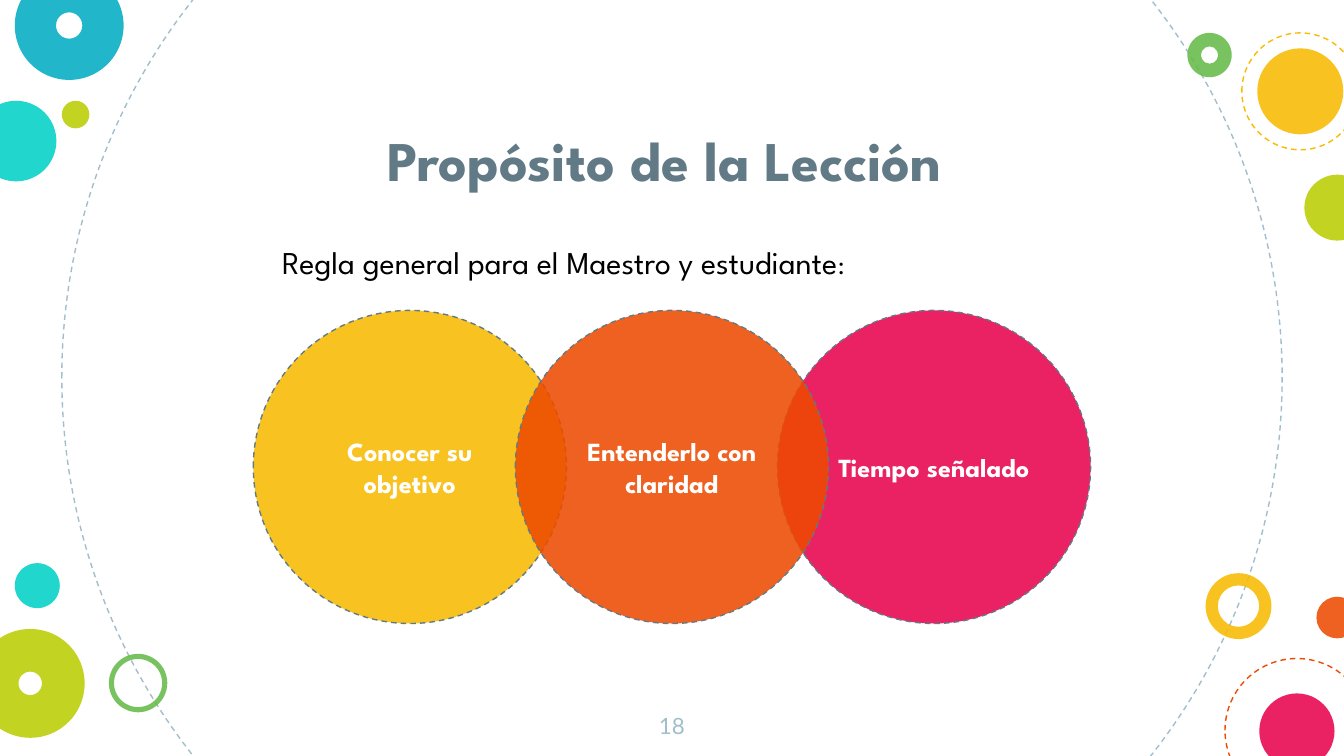
from pptx import Presentation
from pptx.dml.color import RGBColor
from pptx.enum.dml import MSO_LINE
from pptx.enum.shapes import MSO_SHAPE
from pptx.enum.text import MSO_ANCHOR, PP_ALIGN
from pptx.oxml.ns import qn
from pptx.util import Pt
from lxml.etree import SubElement

PX = 4572  # 200 px to the inch
WIDE, HIGH = 2000, 1125

WHITE = RGBColor(0xFF, 0xFF, 0xFF)
BLACK = RGBColor(0x00, 0x00, 0x00)
SLATE = RGBColor(0x61, 0x7A, 0x86)
MIST = RGBColor(0xA1, 0xBE, 0xCC)
AQUA = RGBColor(0x00, 0xD1, 0xC6)
TEAL = RGBColor(0x00, 0xAC, 0xC3)
LIME = RGBColor(0xBB, 0xCD, 0x00)
GREEN = RGBColor(0x65, 0xBB, 0x48)
GOLD = RGBColor(0xF8, 0xBB, 0x00)
ORANGE = RGBColor(0xED, 0x4A, 0x00)
PINK = RGBColor(0xE8, 0x00, 0x4C)

HEAD, BODY = "League Spartan", "Lato"

# Decoration: left, top, size, fill, dashed line, donut ring width
DECOR = [
    (92, -346, 1816, None, MIST, None),
    (-36, 150, 120, AQUA, None, None),
    (1794, 853, 98, GOLD, None, 0.186),
    (22, -43, 162, TEAL, None, 0.379),
    (92, 150, 41, LIME, None, None),
    (1823, 980, 214, None, ORANGE, None),
    (162, 973, 87, GREEN, None, 0.088),
    (1959, 888, 62, ORANGE, None, None),
    (-36, 936, 162, LIME, None, 0.392),
    (1874, 1032, 112, PINK, None, None),
    (1767, 49, 66, GREEN, None, 0.306),
    (1871, 72, 128, GOLD, None, None),
    (1941, 260, 98, LIME, None, None),
    (1848, 49, 174, None, GOLD, None),
    (22, 838, 67, AQUA, None, None),
]

# Main circles from back to front: column, text, fill
STEPS = [
    (0, "Conocer su objetivo", GOLD),
    (2, "Tiempo señalado ", PINK),
    (1, "Entenderlo con claridad", ORANGE),
]
LEFT, TOP, SIZE = 377, 462, 466
STEP = (WIDE - 2 * LEFT - SIZE) / 2

# Text boxes: place, anchor, alignment, runs of (text, size, font, colour, bold)
TEXTS = [
    ((423, 167, 1154, 140), MSO_ANCHOR.BOTTOM, PP_ALIGN.CENTER,
     [("Propósito de la Lección ", 30, HEAD, SLATE, True)]),
    ((949, 1040, 102, 86), MSO_ANCHOR.TOP, PP_ALIGN.CENTER,
     [("18", 12, BODY, MIST, False)]),
    ((400, 341, 1124, 98), MSO_ANCHOR.TOP, PP_ALIGN.LEFT,
     [("Regla general para el Maestro y estudiante", 17, HEAD, BLACK, False),
      (":", 14, HEAD, BLACK, False)]),
]


def emu(*sizes):
    return [round(size * PX) for size in sizes]


def add_disc(left, top, size, fill, line, ring=None):
    kind = MSO_SHAPE.OVAL if ring is None else MSO_SHAPE.DONUT
    disc = slide.shapes.add_shape(kind, *emu(left, top, size, size))
    disc.shadow.inherit = False
    if ring is not None:
        disc.adjustments[0] = ring
    if fill is None:
        disc.fill.background()
    else:
        disc.fill.solid()
        disc.fill.fore_color.rgb = fill
        color = disc.element.spPr.find(qn("a:solidFill"))[0]
        SubElement(color, qn("a:alpha")).set("val", "87000")
    if line is None:
        disc.line.fill.background()
    else:
        disc.line.color.rgb = line
        disc.line.width = Pt(0.75)
        disc.line.dash_style = MSO_LINE.DASH
    return disc


def write(shape, anchor, align, runs):
    frame = shape.text_frame
    frame.word_wrap = True
    frame.vertical_anchor = anchor
    frame.margin_left = frame.margin_right = 20 * PX
    frame.margin_top = frame.margin_bottom = 20 * PX
    para = frame.paragraphs[0]
    para.alignment = align
    for text, size, face, color, bold in runs:
        run = para.add_run()
        run.text = text
        run.font.size = Pt(size)
        run.font.name = face
        run.font.color.rgb = color
        run.font.bold = bold


deck = Presentation()
deck.slide_width, deck.slide_height = emu(WIDE, HIGH)
slide = deck.slides.add_slide(deck.slide_layouts[6])

# Corner decoration
for disc in DECOR:
    add_disc(*disc)

# Overlapping circles
for col, text, fill in STEPS:
    disc = add_disc(LEFT + col * STEP, TOP, SIZE, fill, SLATE)
    write(disc, MSO_ANCHOR.MIDDLE, PP_ALIGN.CENTER,
          [(text, 14, HEAD, WHITE, True)])

# Title, page number and lead line
for place, anchor, align, runs in TEXTS:
    write(slide.shapes.add_textbox(*emu(*place)), anchor, align, runs)

deck.save("out.pptx")
